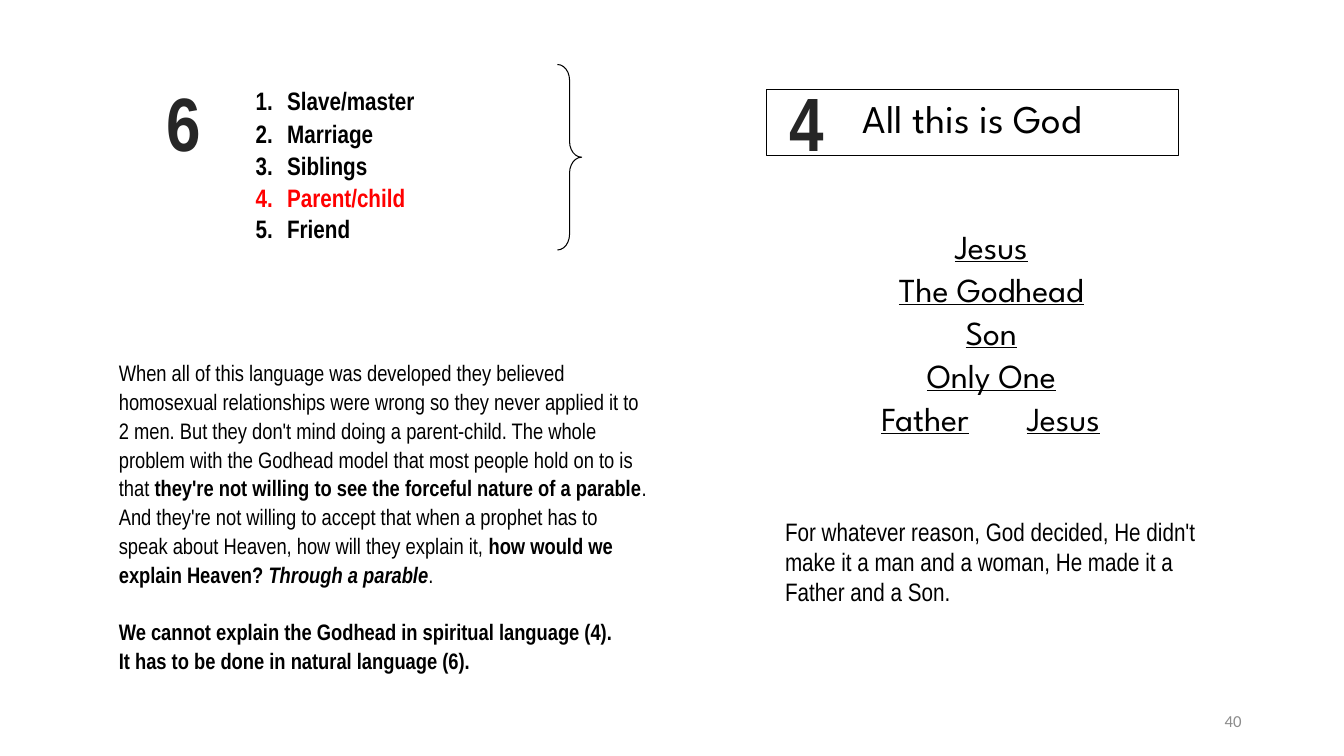
import dataclasses

import pptx
import pptx.dml.color
import pptx.enum.shapes
import pptx.enum.text
import pptx.oxml.ns
import pptx.util
from lxml import etree

Pt = pptx.util.Pt
Align = pptx.enum.text.PP_ALIGN
Anchor = pptx.enum.text.MSO_ANCHOR
Shape = pptx.enum.shapes.MSO_SHAPE
qn = pptx.oxml.ns.qn


@dataclasses.dataclass(frozen=True)
class Theme:
    black: str = "000000"
    white: str = "FFFFFF"
    red: str = "FF0000"
    charcoal: str = "262626"
    gray: str = "8C8C8C"
    narrow: str = "Arial Narrow"
    display: str = "League Spartan"
    plain: str = "Calibri"
    footer_size: int = 12
    body_size: int = 16
    list_size: int = 18
    name_size: int = 24
    title_size: int = 28
    numeral_size: int = 54
    line_spacing: float = 1.07
    outline: float = 0.75


theme = Theme()


def add_box(left, top, width, height, anchor=Anchor.TOP, wrap=True):
    """Add an empty text box and return its text frame."""
    frame = page.shapes.add_textbox(Pt(left), Pt(top), Pt(width), Pt(height)).text_frame
    frame.word_wrap = wrap
    frame.vertical_anchor = anchor
    return frame


def add_span(para, text, face, size, color=theme.black, bold=False, italic=False, underline=False):
    span = para.add_run()
    span.text = text
    span.font.name = face
    span.font.size = Pt(size)
    span.font.color.rgb = pptx.dml.color.RGBColor.from_string(color)
    span.font.bold = bold
    span.font.italic = italic
    span.font.underline = underline


deck = pptx.Presentation()
deck.slide_width, deck.slide_height = Pt(960), Pt(540)
page = deck.slides.add_slide(deck.slide_layouts[6])

# Page number
para = add_box(678, 500.4, 216, 28.8, Anchor.MIDDLE).paragraphs[0]
para.alignment = Align.RIGHT
add_span(para, "40", theme.plain, theme.footer_size, theme.gray)

# Explanation: each paragraph is a list of (text, bold, italic)
explanation = [
    [
        ("When all of this language was developed they believed homosexual relationships were wrong "
         "so they never applied it to 2 men. But they don't mind doing a parent-child. The whole "
         "problem with the Godhead model that most people hold on to is that ", False, False),
        ("they're not willing to see the forceful nature of a parable", True, False),
        (". And they're not willing to accept that when a prophet has to speak about Heaven, "
         "how will they explain it, ", False, False),
        ("how would we explain Heaven? ", True, False),
        ("Through a parable", True, True),
        (".", False, False),
    ],
    [("We cannot explain the Godhead in spiritual language (4).", True, False)],
    [("It has to be done in natural language (6).", True, False)],
]
frame = add_box(77.8, 252, 392.4, 234.7)
for index, spans in enumerate(explanation):
    para = frame.paragraphs[0] if index == 0 else frame.add_paragraph()
    para.line_spacing = theme.line_spacing
    para.space_before = Pt(20.6 if index == 1 else 0)
    for text, bold, italic in spans:
        add_span(para, text, theme.narrow, theme.body_size, bold=bold, italic=italic)

# Names of the Godhead
frame = add_box(576, 155.5, 264.2, 161.3)
for index, name in enumerate(["Jesus", "The Godhead", "Son", "Only One"]):
    para = frame.paragraphs[0] if index == 0 else frame.add_paragraph()
    para.alignment = Align.CENTER
    para.line_spacing = theme.line_spacing
    add_span(para, name, theme.display, theme.name_size, underline=True)

# The last line holds two names, set apart by tab stops
para = frame.add_paragraph()
para.alignment = Align.LEFT
para.line_spacing = theme.line_spacing
tab_stops = etree.SubElement(para._p.get_or_add_pPr(), qn("a:tabLst"))
for position in (46.5, 150.5):
    etree.SubElement(tab_stops, qn("a:tab"), pos=str(Pt(position)), algn="l")
add_span(para, "\t", theme.display, theme.name_size)
add_span(para, "Father\tJesus", theme.display, theme.name_size, underline=True)

# Reason
para = add_box(553.7, 365, 319, 72.7).paragraphs[0]
add_span(para, "For whatever reason, God decided, He didn't make it a man and a woman, "
         "He made it a Father and a Son.", theme.narrow, theme.list_size)

# Title panel and brace
panel = page.shapes.add_shape(Shape.RECTANGLE, Pt(547.2), Pt(64.1), Pt(294.5), Pt(46.8))
panel.fill.solid()
panel.fill.fore_color.rgb = pptx.dml.color.RGBColor.from_string(theme.white)
panel.text_frame.vertical_anchor = Anchor.TOP
para = panel.text_frame.paragraphs[0]
para.alignment = Align.CENTER
add_span(para, "All this is God", theme.display, theme.title_size)

brace = page.shapes.add_shape(Shape.RIGHT_BRACE, Pt(398.2), Pt(46.1), Pt(17.3), Pt(132.5))
brace.adjustments[0] = 0.65
brace.adjustments[1] = 0.5
brace.fill.background()

for outlined in (panel, brace):
    outlined.shadow.inherit = False
    outlined.line.color.rgb = pptx.dml.color.RGBColor.from_string(theme.black)
    outlined.line.width = Pt(theme.outline)

# Numbered relationships
relationships = ["Slave/master", "Marriage", "Siblings", "Parent/child", "Friend"]
frame = add_box(94.3, 56.2, 268.6, 122.4)
for index, relationship in enumerate(relationships):
    para = frame.paragraphs[0] if index == 0 else frame.add_paragraph()
    para.line_spacing = 1.0 if relationship == "Friend" else theme.line_spacing
    properties = para._p.get_or_add_pPr()
    properties.set("marL", str(Pt(103.7)))
    properties.set("indent", str(Pt(-22.5)))
    etree.SubElement(properties, qn("a:buFont"), typeface="+mj-lt")
    etree.SubElement(properties, qn("a:buAutoNum"), type="arabicPeriod")
    color = theme.red if relationship == "Parent/child" else theme.black
    add_span(para, relationship, theme.narrow, theme.list_size, color, bold=True)

# Large numerals
for left, numeral in ((111.6, "6"), (556.6, "4")):
    para = add_box(left, 50.4, 39.6, 72.7, wrap=False).paragraphs[0]
    para.alignment = Align.CENTER
    add_span(para, numeral, theme.narrow, theme.numeral_size, theme.charcoal, bold=True)

deck.save("out.pptx")
